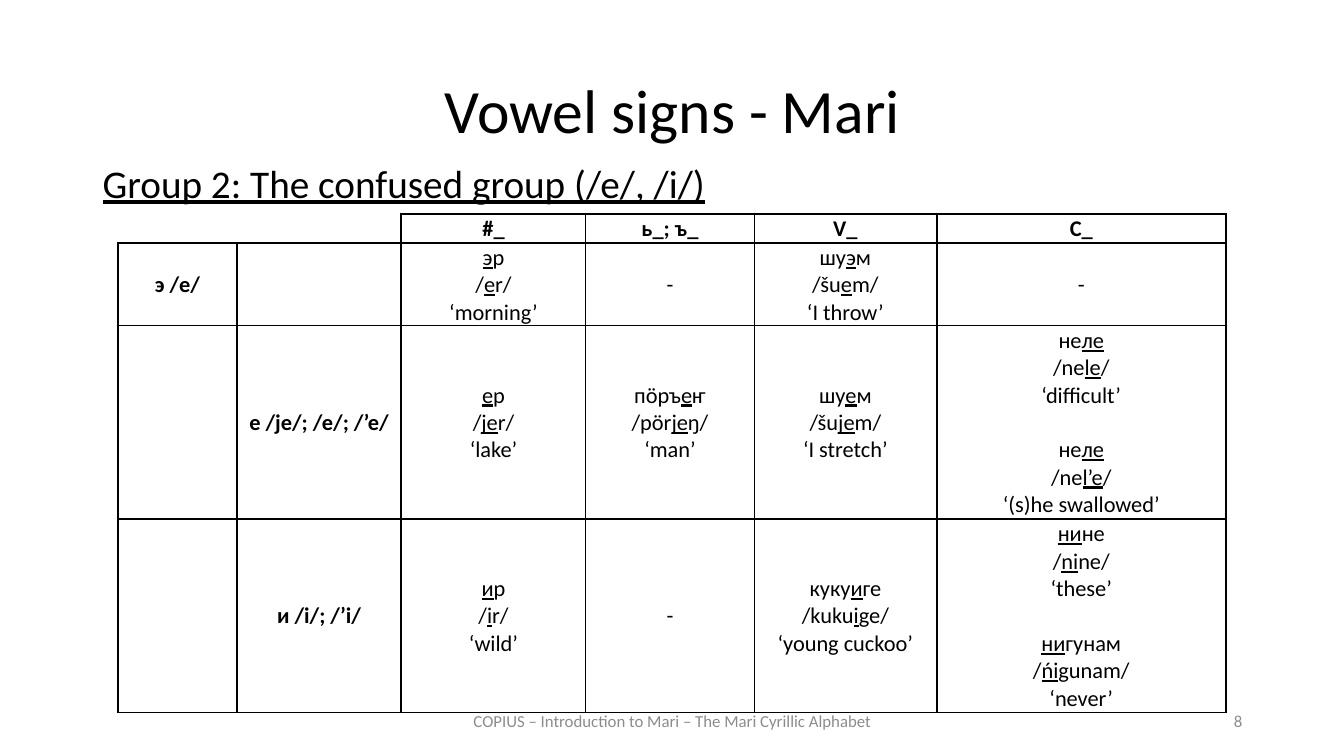
from lxml import etree
from pptx import Presentation
from pptx import util as u
from pptx.dml.color import RGBColor
from pptx.enum import text
from pptx.oxml.ns import qn

PX = 9144  # EMU per px, 100 px to the inch
FONT = "Calibri"
COLORS = {"ink": "000000", "muted": "8C8C8C"}
LEFT, CENTER, RIGHT = text.PP_ALIGN.LEFT, text.PP_ALIGN.CENTER, text.PP_ALIGN.RIGHT
LINE_GAP = 19.5  # height of one 16 pt line
NO_STYLE = "{2D5ABB26-0587-4C30-8999-92F81FD0307C}"

COLUMNS = [118, 163, 183, 167, 181, 287]
ROWS = [29, 82, 192, 192]
VERTICAL_RULES = [1.5, 1, 1.5, 1, 1, 1.5, 1.5]
HORIZONTAL_RULES = [1.5, 1.5, 1, 1.5, 1.5]

# "|" starts a line, "||" leaves a gap, "[...]" is underlined
CELLS = [
    ["", "", "#_", "ь_; ъ_", "V_", "C_"],
    ["э /e/", "", "[э]р|/[e]r/|‘morning’", "-",
     "шу[э]м|/šu[e]m/|‘I throw’", "-"],
    ["", "е /je/; /e/; /’e/", "[е]р|/[je]r/|‘lake’",
     "пӧръ[е]ҥ|/pör[je]ŋ/|‘man’", "шу[е]м|/šu[je]m/|‘I stretch’",
     "не[ле]|/ne[le]/|‘difficult’||не[ле]|/ne[l’e]/|‘(s)he swallowed’"],
    ["", "и /i/; /’i/", "[и]р|/[i]r/|‘wild’", "-",
     "куку[и]ге|/kuku[i]ge/|‘young cuckoo’",
     "[ни]не|/[ni]ne/|‘these’||[ни]гунам|/[ńi]gunam/|‘never’"],
]


def write(frame, content, size=16, color="ink", bold=False, align=CENTER, spacing=None):
    """Fill a text frame from marked-up content."""
    para, gap = frame.paragraphs[0], False
    for index, line in enumerate(content.split("|")):
        if not line:
            gap = True
            continue
        if index:
            para = frame.add_paragraph()
        para.alignment = align
        if spacing:
            para.line_spacing = spacing
        if gap:
            para.space_before = u.Pt(LINE_GAP)
            gap = False
        for part, words in enumerate(line.replace("]", "[").split("[")):
            if words:
                span = para.add_run()
                span.text = words
                font = span.font
                font.name, font.size, font.bold = FONT, u.Pt(size), bold
                font.underline = part % 2 == 1
                font.color.rgb = RGBColor.from_string(COLORS[color])


def place(shape, box):
    shape.left, shape.top, shape.width, shape.height = (n * PX for n in box)


def add_title(page, box, content):
    title = page.shapes.title
    place(title, box)
    title.text_frame.vertical_anchor = text.MSO_ANCHOR.MIDDLE
    write(title.text_frame, content, size=44, spacing=0.9)


def add_label(page, box, content, anchor=text.MSO_ANCHOR.MIDDLE, **style):
    label = page.shapes.add_textbox(*(n * PX for n in box))
    label.text_frame.word_wrap = True
    label.text_frame.vertical_anchor = anchor
    write(label.text_frame, content, **style)


def set_borders(cell, widths):
    """Draw the sides in widths; a width of 0 hides the side."""
    props = cell._tc.get_or_add_tcPr()
    for side, width in zip("LRTB", widths):
        line = etree.SubElement(props, qn(f"a:ln{side}"), w=str(u.Pt(width)))
        if width:
            fill = etree.SubElement(line, qn("a:solidFill"))
            etree.SubElement(fill, qn("a:srgbClr"), val=COLORS["ink"])
        else:
            etree.SubElement(line, qn("a:noFill"))


def add_vowel_table(page, box):
    frame = page.shapes.add_table(len(ROWS), len(COLUMNS), *(n * PX for n in box))
    table = frame.table
    table.first_row = table.horz_banding = False
    table._tbl.tblPr.find(qn("a:tableStyleId")).text = NO_STYLE
    for column, width in zip(table.columns, COLUMNS):
        column.width = width * PX
    for row, height in zip(table.rows, ROWS):
        row.height = height * PX

    for r, contents in enumerate(CELLS):
        for c, content in enumerate(contents):
            cell = table.cell(r, c)
            cell.margin_left = cell.margin_right = 10 * PX
            cell.margin_top, cell.margin_bottom = PX, 0
            cell.vertical_anchor = text.MSO_ANCHOR.MIDDLE
            if content:
                write(cell.text_frame, content, bold=r == 0 or c < 2)
            else:
                # Keep empty cells from stretching their row
                para = cell.text_frame.paragraphs[0]
                etree.SubElement(para._p, qn("a:endParaRPr"), sz="1600")
            # The corner above the row heads is open
            corner = r == 0 and c < 2
            set_borders(cell, [
                0 if corner else VERTICAL_RULES[c],
                0 if corner and c == 0 else VERTICAL_RULES[c + 1],
                0 if corner else HORIZONTAL_RULES[r],
                HORIZONTAL_RULES[r + 1],
            ])
            cell.fill.background()


def add_footer(page, box):
    left, top, width, height = box
    add_label(page, (left + 350, top, 450, height),
              "COPIUS – Introduction to Mari – The Mari Cyrillic Alphabet",
              size=12, color="muted")
    add_label(page, (left + width - 300, top, 300, height), "8",
              size=12, color="muted", align=RIGHT)


def main():
    deck = Presentation()
    deck.slide_width, deck.slide_height = 1333 * PX, 750 * PX
    page = deck.slides.add_slide(deck.slide_layouts[5])
    add_title(page, (92, 40, 1150, 145), "Vowel signs - Mari")
    add_label(page, (92, 158, 1150, 53), "[Group 2: The confused group (/e/, /i/)]",
              anchor=text.MSO_ANCHOR.TOP, size=28, align=LEFT, spacing=0.9)
    add_vowel_table(page, (117, 212, sum(COLUMNS), sum(ROWS)))
    add_footer(page, (92, 695, 1150, 40))
    deck.save("out.pptx")


if __name__ == "__main__":
    main()
